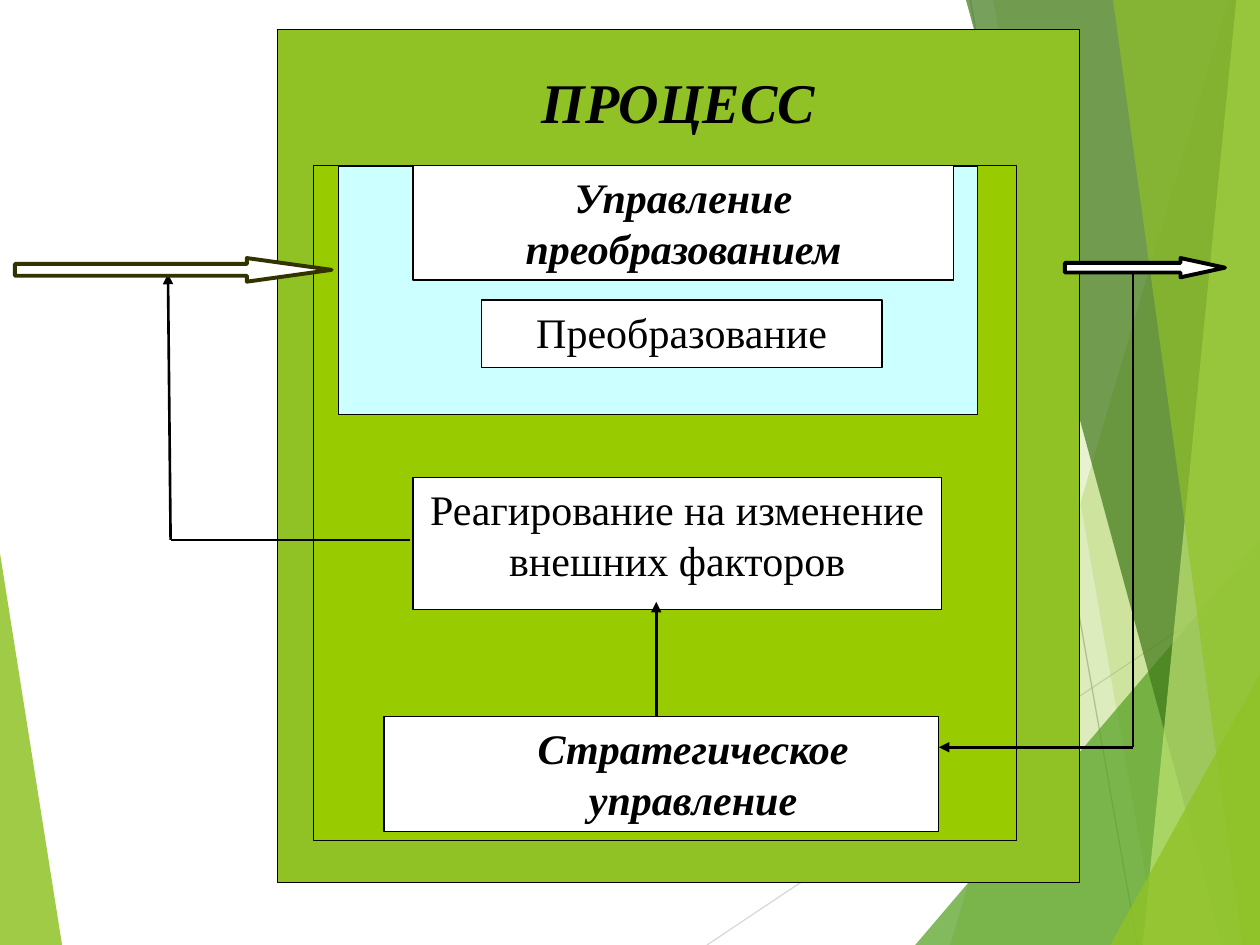
import pptx
import pptx.util
import pptx.dml.color
import pptx.enum.shapes
import pptx.enum.text
import pptx.oxml.ns
from lxml import etree

Pt = pptx.util.Pt
RGB = pptx.dml.color.RGBColor
SHAPE = pptx.enum.shapes.MSO_SHAPE
qn = pptx.oxml.ns.qn

BLACK = RGB(0x00, 0x00, 0x00)
WHITE = RGB(0xFF, 0xFF, 0xFF)
GREEN = RGB(0x90, 0xC2, 0x26)
LIME = RGB(0x99, 0xCC, 0x00)
LEAF = RGB(0x54, 0xA0, 0x21)
FOREST = RGB(0x3F, 0x78, 0x19)
PALE = RGB(0xC0, 0xE4, 0x74)
CYAN = RGB(0xCC, 0xFF, 0xFF)
OLIVE = RGB(0x33, 0x33, 0x00)
SILVER = RGB(0xD9, 0xD9, 0xD9)
GRAY = RGB(0xBF, 0xBF, 0xBF)


class Deck:
    font = "Times New Roman"
    title_size = 32
    text_size = 24
    inset = 7.2

    def __init__(self, width, height):
        self.prs = pptx.Presentation()
        self.prs.slide_width = Pt(width)
        self.prs.slide_height = Pt(height)
        self.s = None

    def add_slide(self):
        self.s = self.prs.slides.add_slide(self.prs.slide_layouts[5])

    def set_text(self, sp, text, size, strong, indent=0):
        tf = sp.text_frame
        tf.word_wrap = True
        tf.auto_size = pptx.enum.text.MSO_AUTO_SIZE.NONE
        tf.margin_left = Pt(self.inset + indent)
        p = tf.paragraphs[0]
        p.text = text
        p.alignment = pptx.enum.text.PP_ALIGN.CENTER
        p.font.name = self.font
        p.font.size = Pt(size)
        p.font.bold = p.font.italic = strong
        p.font.color.rgb = BLACK

    def title(self, text, x, y, w, h):
        sp = self.s.shapes.title
        sp.left, sp.top, sp.width, sp.height = Pt(x), Pt(y), Pt(w), Pt(h)
        self.set_text(sp, text, self.title_size, True)
        sp.text_frame.vertical_anchor = pptx.enum.text.MSO_ANCHOR.MIDDLE
        self.s.shapes.element.append(sp.element)

    def shape(self, kind, x, y, w, h, fill, line, weight):
        sp = self.s.shapes.add_shape(kind, Pt(x), Pt(y), Pt(w), Pt(h))
        sp.shadow.inherit = False
        sp.fill.solid()
        sp.fill.fore_color.rgb = fill
        sp.line.color.rgb = line
        sp.line.width = Pt(weight)
        return sp

    def box(self, x, y, w, h, fill=WHITE, text=None, strong=False, indent=0):
        sp = self.shape(SHAPE.RECTANGLE, x, y, w, h, fill, BLACK, 0.75)
        if text:
            self.set_text(sp, text, self.text_size, strong, indent)
            sp.text_frame.vertical_anchor = pptx.enum.text.MSO_ANCHOR.TOP

    def block_arrow(self, x, y, w, h, head, line):
        sp = self.shape(SHAPE.RIGHT_ARROW, x, y, w, h, WHITE, line, 2.25)
        sp.adjustments[0] = 0.5
        sp.adjustments[1] = head

    def line(self, x1, y1, x2, y2, color=BLACK, weight=1.5, arrow=False):
        sp = self.s.shapes.add_connector(
            pptx.enum.shapes.MSO_CONNECTOR.STRAIGHT, Pt(x1), Pt(y1), Pt(x2), Pt(y2))
        sp.line.color.rgb = color
        sp.line.width = Pt(weight)
        spPr = sp.element.spPr
        if arrow:
            etree.SubElement(spPr.find(qn("a:ln")), qn("a:tailEnd"), type="triangle")
        etree.SubElement(spPr, qn("a:effectLst"))

    def facet(self, color, opacity, points):
        start, *rest = [(Pt(x), Pt(y)) for x, y in points]
        builder = self.s.shapes.build_freeform(*start)
        builder.add_line_segments(rest, close=True)
        sp = builder.convert_to_shape()
        sp.shadow.inherit = False
        sp.fill.solid()
        sp.fill.fore_color.rgb = color
        clr = sp.element.spPr.find(qn("a:solidFill"))[0]
        etree.SubElement(clr, qn("a:alpha"), val=str(opacity * 1000))
        sp.line.fill.background()


def add_backdrop(deck, right, bottom):
    deck.facet(GREEN, 85, [(0, 316), (35.5, bottom), (0, bottom)])
    deck.line(404, bottom, right, 329, SILVER, 0.75)
    deck.line(554.5, 0, 650, bottom, GRAY, 0.75)
    for color, opacity, top_x, top_y, bottom_x in [
        (GREEN, 30, 702, 0, 543),
        (GREEN, 20, 567.5, 0, 661.5),
        (LEAF, 72, right, 309, 523),
        (FOREST, 70, 552, 0, 698.5),
        (PALE, 70, 706.5, 0, 653),
        (GREEN, 65, 636, 0, 710),
        (GREEN, 80, right, 385, 634.5),
    ]:
        points = [(top_x, top_y), (bottom_x, bottom), (right, bottom)]
        if top_x < right:
            points.append((right, top_y))
        deck.facet(color, opacity, points)


def add_process(deck):
    deck.box(158.5, 17, 458.5, 487.5, GREEN)
    deck.box(179, 94.5, 402, 386, LIME)
    deck.box(219.5, 409.5, 317, 65.5, text="Стратегическое управление",
             strong=True, indent=36)
    deck.box(193.5, 95, 365, 142, CYAN)
    deck.box(236, 94.5, 309, 65.5, text="Управление преобразованием", strong=True)
    deck.box(275, 171.5, 229, 38.5, text="Преобразование")
    deck.box(236, 273, 302, 75.5, text="Реагирование на изменение внешних факторов")
    deck.title("ПРОЦЕСС", 158.5, 17, 458.5, 82)


def add_flows(deck):
    deck.line(97.5, 308.5, 96, 156.5, arrow=True)
    deck.line(647.5, 154, 647.5, 427)
    deck.line(234, 308.5, 97.5, 308.5)
    deck.block_arrow(8.5, 147.5, 181, 13.5, 3.59, OLIVE)
    deck.block_arrow(608.5, 147.5, 91.5, 11, 2.31, BLACK)
    deck.line(375, 409.5, 375, 344, arrow=True)
    deck.line(647.5, 427, 536.5, 427, arrow=True)


def main():
    width, height = 720, 540
    deck = Deck(width, height)
    deck.add_slide()
    add_backdrop(deck, width, height)
    add_process(deck)
    add_flows(deck)
    deck.prs.save("out.pptx")


if __name__ == "__main__":
    main()
